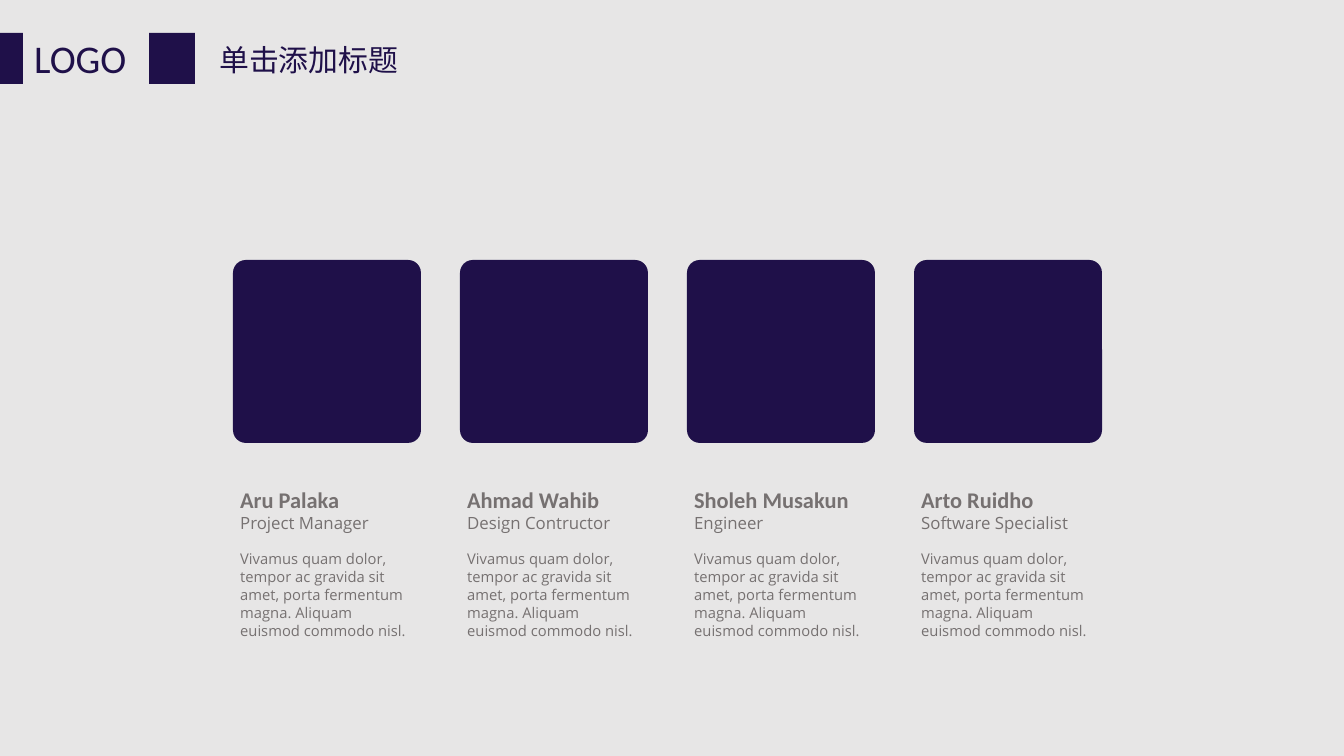
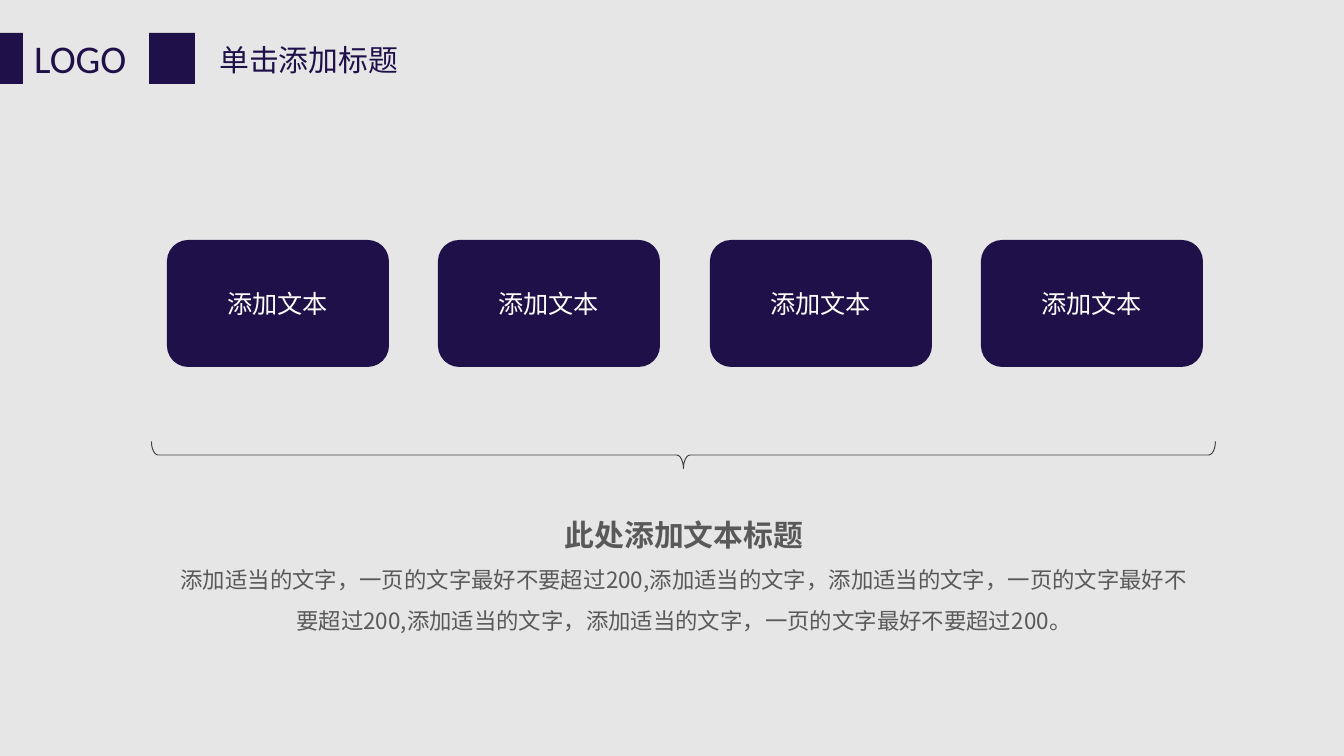
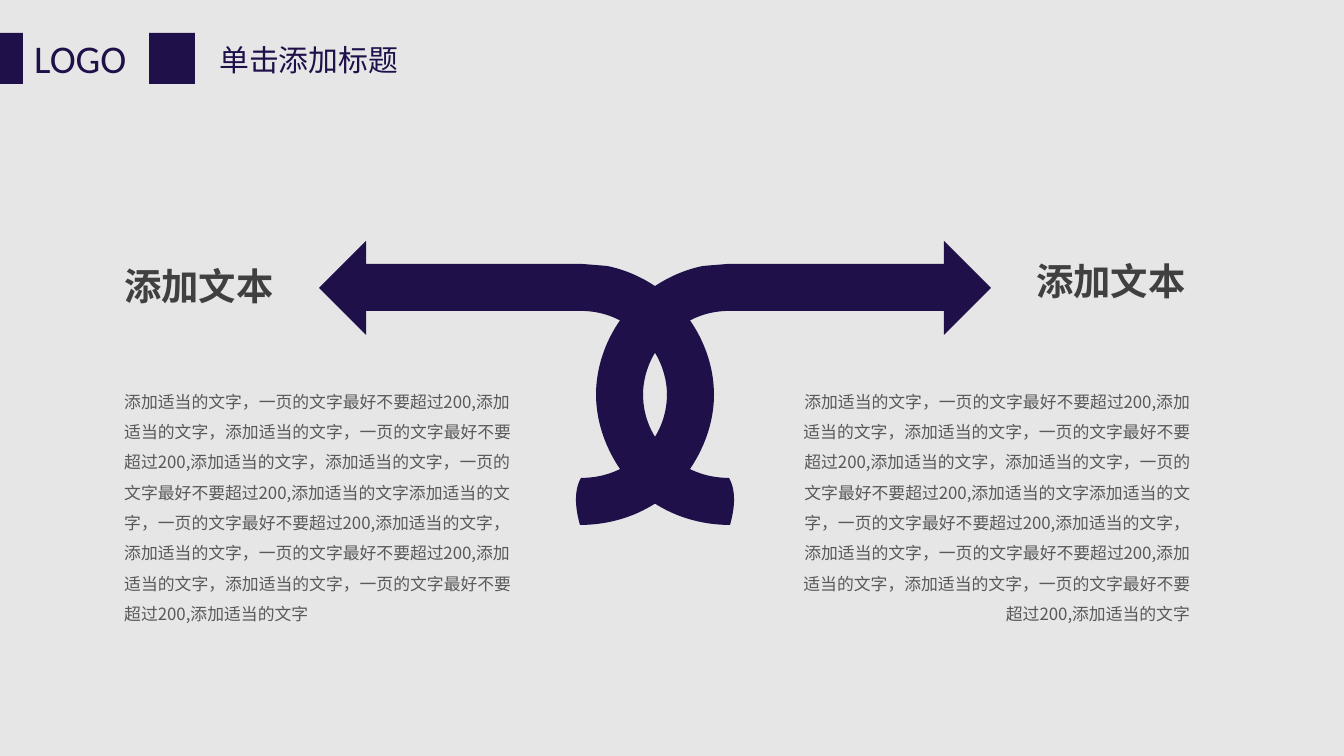
import pptx
import pptx.util
import pptx.dml.color
import pptx.enum.shapes
import pptx.enum.text
import pptx.oxml.ns
import lxml.etree

# Shared look
PX = 914400 / 134.4
NAVY, PALE, WHITE = "1F1049", "E7E6E6", "FFFFFF"
DARK, GRAY, WARM_GRAY = "404040", "595959", "767171"
CALIBRI, OPEN_SANS, NOTO = "Calibri", "Open Sans", "Noto Sans CJK SC"
SHAPES = pptx.enum.shapes.MSO_SHAPE
ALIGN = pptx.enum.text.PP_ALIGN
ANCHOR = pptx.enum.text.MSO_ANCHOR

# Content
TITLE = "单击添加标题"
LOGO_LABEL = "LOGO"
HEADER_BLOCKS = [(0, 33, 23, 51), (149, 33, 46, 51)]

TEAM = [
    ("Aru Palaka", "Project Manager"),
    ("Ahmad Wahib", "Design Contructor"),
    ("Sholeh Musakun", "Engineer"),
    ("Arto Ruidho", "Software Specialist"),
]
BIOGRAPHY = ("Vivamus quam dolor, tempor ac gravida sit amet, porta fermentum "
             "magna. Aliquam euismod commodo nisl.")

BUTTONS = ["添加文本"] * 4
SUMMARY_TITLE = "此处添加文本标题"
ADD_WORDS = "添加适当的文字"
LIMIT = "一页的文字最好不要超过200"
ADVICE = f"{ADD_WORDS}，{LIMIT},{ADD_WORDS}，" * 2 + f"{ADD_WORDS}，{LIMIT}"
SUMMARY = ADVICE + "。"

SIDE_TITLE = "添加文本"
SIDE_TEXT = f"{ADVICE},{ADD_WORDS}" * 2
# Title box, text box and text alignment of each side
SIDES = [
    ((111, 257, 177, 59), (111, 375, 417, 254), ALIGN.LEFT),
    ((1023, 252, 177, 59), (781, 375, 422, 254), ALIGN.RIGHT),
]

# Ribbon outlines: x from the axis; one point is a line, three are a curve
RIBBON_AXIS = 655
ARROW = [
    [(289, 241)], [(336, 288)], [(289, 335)], [(289, 311)], [(74, 311)],
    [(51, 311), (30, 320), (14, 336)], [(-3, 351), (-12, 374), (-12, 395)],
    [(-59, 395)],
    [(-59, 360), (-44, 327), (-20, 302)], [(-1, 284), (23, 271), (48, 266)],
    [(73, 264)], [(289, 264)],
]
TAIL = [
    [(-59, 394)],
    [(-59, 429), (-44, 462), (-20, 488)], [(5, 512), (39, 525), (75, 525)],
    [(79, 511), (82, 492), (74, 478)],
    [(51, 478), (30, 470), (14, 454)], [(-3, 438), (-12, 417), (-12, 394)],
]


# Helpers
def px(length):
    return pptx.util.Emu(round(length * PX))


def color(hex_code):
    return pptx.dml.color.RGBColor.from_string(hex_code)


def paint(shape, fill):
    shape.shadow.inherit = False
    shape.fill.solid()
    shape.fill.fore_color.rgb = color(fill)
    shape.line.fill.background()


def add_block(slide, kind, box, fill=NAVY):
    shape = slide.shapes.add_shape(kind, *map(px, box))
    paint(shape, fill)
    return shape


def style(paragraph, text, size, font, hex_code, bold=False, align=ALIGN.LEFT,
          leading=None, before=0):
    """Fill and format a paragraph; leading and before are in points."""
    paragraph.text = text
    paragraph.alignment = align
    paragraph.space_before = pptx.util.Pt(before)
    if leading:
        paragraph.line_spacing = pptx.util.Pt(leading)
    for run in paragraph.runs:
        run.font.size = pptx.util.Pt(size)
        run.font.name = font
        run.font.bold = bold
        run.font.color.rgb = color(hex_code)
        if font == NOTO:
            east_asian = lxml.etree.SubElement(
                run.font._element, pptx.oxml.ns.qn("a:ea"))
            east_asian.set("typeface", font)


def add_text(slide, box, lines, wrap=True):
    frame = slide.shapes.add_textbox(*map(px, box)).text_frame
    frame.word_wrap = wrap
    for index, line in enumerate(lines):
        paragraph = frame.add_paragraph() if index else frame.paragraphs[0]
        style(paragraph, **line)
    return frame


def add_slide(presentation):
    """Title-only slide with the shared header."""
    slide = presentation.slides.add_slide(presentation.slide_layouts[5])
    title = slide.shapes.title
    title.left, title.top, title.width, title.height = map(px, (206, 35, 290, 50))
    frame = title.text_frame
    frame.auto_size = pptx.enum.text.MSO_AUTO_SIZE.NONE
    frame.vertical_anchor = ANCHOR.TOP
    style(frame.paragraphs[0], TITLE, 16, CALIBRI, NAVY)
    add_text(slide, (21, 28, 136, 60),
             [dict(text=LOGO_LABEL, size=21, font=CALIBRI, hex_code=NAVY)])
    for box in HEADER_BLOCKS:
        add_block(slide, SHAPES.RECTANGLE, box)
    return slide


def add_ribbon(slide, outline, side):
    """Draw an outline right (side=1) or mirrored left (side=-1) of the axis."""
    corners = [(px(RIBBON_AXIS + side * x), px(y))
               for segment in outline for x, y in segment]
    builder = slide.shapes.build_freeform(*corners[0])
    builder.add_line_segments(corners[1:], close=True)
    shape = builder.convert_to_shape()
    paint(shape, NAVY)

    # Merge each run of three line points into one Bezier curve
    lines = iter(list(shape._element.iter(pptx.oxml.ns.qn("a:lnTo"))))
    for segment in outline[1:]:
        parts = [next(lines) for _ in segment]
        if len(parts) == 3:
            curve = lxml.etree.Element(pptx.oxml.ns.qn("a:cubicBezTo"))
            parts[0].addprevious(curve)
            for part in parts:
                curve.append(part[0])
                part.getparent().remove(part)


# Slides
def build_team(presentation):
    slide = add_slide(presentation)
    for index, (name, role) in enumerate(TEAM):
        left = 233 + 227 * index
        add_text(slide, (left - 6, 479, 200, 168), [
            dict(text=name, size=12, font=CALIBRI, hex_code=WARM_GRAY, bold=True),
            dict(text=role, size=9, font=OPEN_SANS, hex_code=WARM_GRAY, leading=11),
            dict(text=BIOGRAPHY, size=7.9, font=OPEN_SANS, hex_code=WARM_GRAY,
                 leading=9.55, before=9),
        ])
        card = add_block(slide, SHAPES.ROUNDED_RECTANGLE, (left, 260, 188, 183))
        card.adjustments[0] = 0.07


def build_summary(presentation):
    slide = add_slide(presentation)
    brace = slide.shapes.add_shape(SHAPES.LEFT_BRACE, *map(px, (670, -77, 27, 1064)))
    brace.rotation = 270
    brace.adjustments[0] = 0.25
    brace.shadow.inherit = False
    brace.fill.background()
    brace.line.color.rgb = color(DARK)
    brace.line.width = pptx.util.Pt(0.5)
    for index, label in enumerate(BUTTONS):
        button = add_block(slide, SHAPES.ROUNDED_RECTANGLE,
                           (167 + 543 * index // 2, 240, 222, 127))
        button.text_frame.vertical_anchor = ANCHOR.MIDDLE
        style(button.text_frame.paragraphs[0], label, 13.5, NOTO, WHITE,
              align=ALIGN.CENTER)
    frame = add_text(slide, (162, 494, 1044, 146), [
        dict(text=SUMMARY_TITLE, size=16, font=NOTO, hex_code=GRAY, bold=True,
             align=ALIGN.CENTER, leading=28.8),
        dict(text=SUMMARY, size=12, font=NOTO, hex_code=GRAY,
             align=ALIGN.CENTER, leading=21.7),
    ])
    frame.margin_left = frame.margin_right = px(9)
    frame.margin_top = frame.margin_bottom = px(5)


def build_split(presentation):
    slide = add_slide(presentation)
    for outline in (ARROW, TAIL):
        for side in (1, -1):
            add_ribbon(slide, outline, side)
    for title_box, text_box, align in SIDES:
        add_text(slide, text_box, [dict(text=SIDE_TEXT, size=9, font=NOTO,
                                        hex_code=GRAY, align=align, leading=16.2)])
        add_text(slide, title_box, [dict(text=SIDE_TITLE, size=20, font=NOTO,
                                         hex_code=DARK, bold=True, leading=24)],
                 wrap=False)


def main():
    presentation = pptx.Presentation()
    presentation.slide_width, presentation.slide_height = px(1344), px(756)
    background = presentation.slide_master.background.fill
    background.solid()
    background.fore_color.rgb = color(PALE)
    build_team(presentation)
    build_summary(presentation)
    build_split(presentation)
    presentation.save("out.pptx")


if __name__ == "__main__":
    main()
